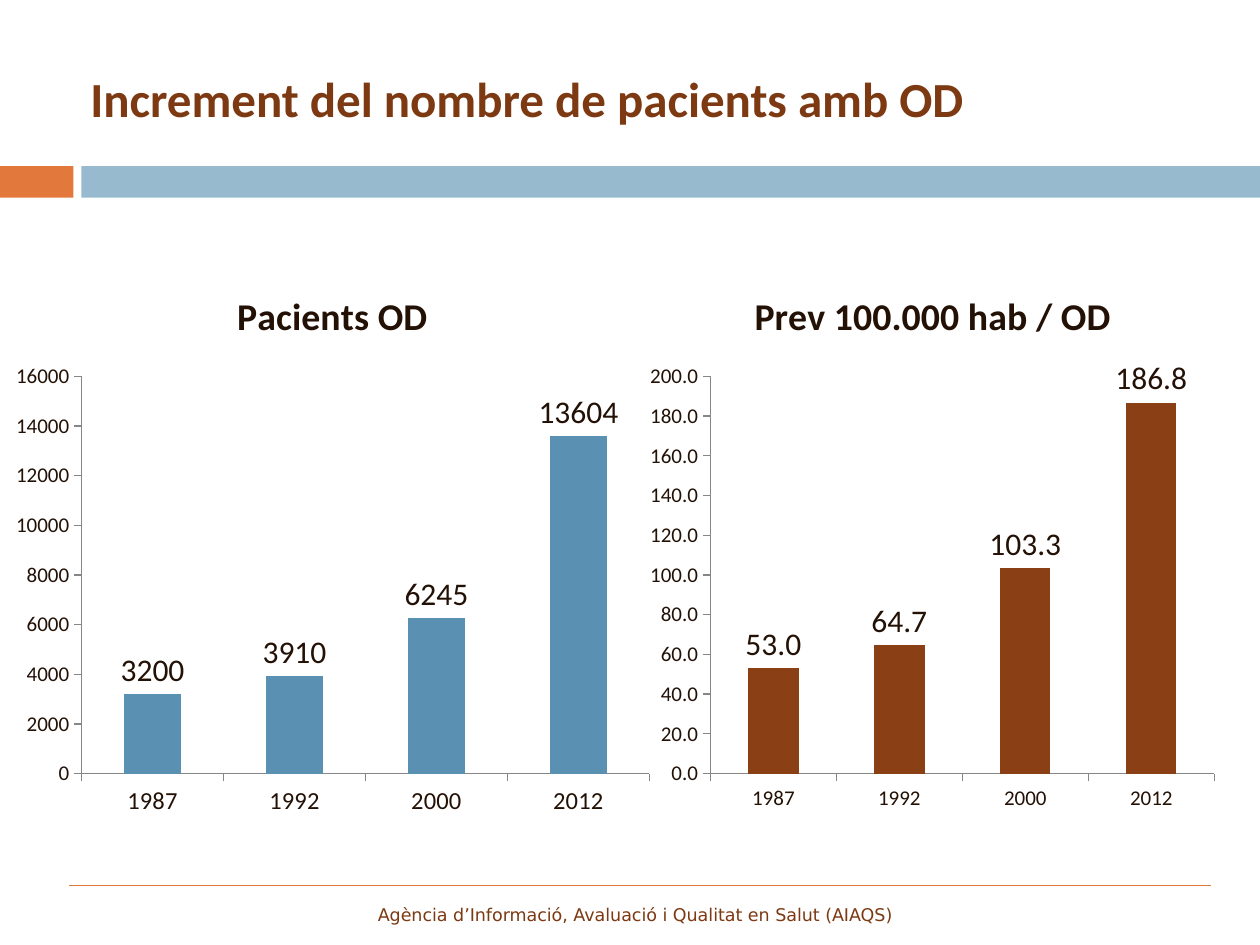
import pptx
import pptx.chart.data
import pptx.dml.color
import pptx.enum.chart
import pptx.enum.shapes
import pptx.enum.text
import pptx.oxml
import pptx.oxml.ns
import pptx.oxml.xmlchemy
import pptx.util
from pptx.util import Pt

BROWN, ORANGE, DARK = "7C3912", "E2783B", "231106"


def rgb(value):
    return pptx.dml.color.RGBColor.from_string(value)


def style(font, size, color, name="Calibri", bold=False):
    font.size, font.name, font.bold = Pt(size), name, bold
    font.color.rgb = rgb(color)


prs = pptx.Presentation()
prs.slide_width, prs.slide_height = Pt(720), Pt(540)
s = prs.slides.add_slide(prs.slide_layouts[6])

# Band under the title
for left, width, color in [(0, 42, ORANGE), (46.5, 673.5, "97BACF")]:
    sp = s.shapes.add_shape(pptx.enum.shapes.MSO_SHAPE.RECTANGLE,
                            Pt(left), Pt(95), Pt(width), Pt(18))
    sp.shadow.inherit = False
    sp.fill.solid()
    sp.fill.fore_color.rgb = rgb(color)
    sp.line.fill.background()

# Footer rule
line = s.shapes.add_connector(pptx.enum.shapes.MSO_CONNECTOR.STRAIGHT,
                              Pt(39.5), Pt(506), Pt(692), Pt(506))
line.line.color.rgb = rgb(ORANGE)
line.line.width = Pt(0.75)
line._element.spPr.append(pptx.oxml.xmlchemy.OxmlElement("a:effectLst"))

# Title and footer text
anchors, aligns = pptx.enum.text.MSO_ANCHOR, pptx.enum.text.PP_ALIGN
for text, box, anchor, align, size, font, bold in [
    ("Increment del nombre de pacients amb OD", (44.6, 22.3, 639.4, 67.7),
     anchors.MIDDLE, aligns.LEFT, 28, "Calibri", True),
    ("Agència d’Informació, Avaluació i Qualitat en Salut (AIAQS)",
     (39.6, 506.2, 646.6, 25.9),
     anchors.BOTTOM, aligns.CENTER, 10, "DejaVu Sans", False),
]:
    tf = s.shapes.add_textbox(*map(Pt, box)).text_frame
    tf.word_wrap = True
    tf.vertical_anchor = anchor
    p = tf.paragraphs[0]
    p.alignment = align
    r = p.add_run()
    r.text = text
    style(r.font, size, BROWN, font, bold)

# Column charts: plot holds x, y, w, h as fractions of the chart
xl = pptx.enum.chart
years = ["1987", "1992", "2000", "2012"]
plot = (0.12, 0.2, 0.86, 0.71)
for name, values, left, width, color, fmt, top_value, step, cat_size in [
    ("Pacients OD", (3200, 3910, 6245, 13604), 1.4, 377.3, "5A91B3",
     "0", 16000, 2000, 14),
    ("Prev 100.000 hab / OD", (53, 64.7, 103.3, 186.8), 365.8, 334.8, "8B3F14",
     "0.0", 200, 20, 12),
]:
    data = pptx.chart.data.CategoryChartData(number_format=fmt)
    data.categories = years
    data.add_series(name, values)
    chart = s.shapes.add_chart(xl.XL_CHART_TYPE.COLUMN_CLUSTERED, Pt(left),
                               Pt(151.2), Pt(width), Pt(319.7), data).chart
    style(chart.font, 18, DARK)
    chart.has_legend = False
    chart.has_title = True
    r = chart.chart_title.text_frame.paragraphs[0].add_run()
    r.text = name
    style(r.font, 21.6, DARK, bold=True)

    # Axes
    for axis, size in [(chart.category_axis, cat_size), (chart.value_axis, 12)]:
        axis.has_major_gridlines = False
        axis.major_tick_mark = xl.XL_TICK_MARK.OUTSIDE
        axis.format.line.color.rgb = rgb("868686")
        axis.format.line.width = Pt(0.75)
        style(axis.tick_labels.font, size, DARK)
    axis = chart.value_axis
    axis.minimum_scale, axis.maximum_scale, axis.major_unit = 0, top_value, step
    axis.tick_labels.number_format = fmt
    axis.tick_labels.number_format_is_linked = False

    # Columns and value labels
    bars = chart.plots[0]
    bars.gap_width = 150
    bars.vary_by_categories = False
    fill = bars.series[0].format.fill
    fill.solid()
    fill.fore_color.rgb = rgb(color)
    bars.has_data_labels = True
    labels = bars.data_labels
    labels.show_value = True
    labels.position = xl.XL_LABEL_POSITION.OUTSIDE_END
    labels.number_format, labels.number_format_is_linked = fmt, False
    style(labels.font, 18, DARK)

    # Plot area position
    area = chart._chartSpace.chart.plotArea
    for old in area.findall(pptx.oxml.ns.qn("c:layout")):
        area.remove(old)
    parts = [("layoutTarget", "inner"), ("xMode", "edge"), ("yMode", "edge")]
    parts += zip("xywh", plot)
    inner = "".join(f'<c:{tag} val="{val}"/>' for tag, val in parts)
    area.insert(0, pptx.oxml.parse_xml(
        f'<c:layout {pptx.oxml.ns.nsdecls("c")}>'
        f'<c:manualLayout>{inner}</c:manualLayout></c:layout>'))

prs.save("out.pptx")
